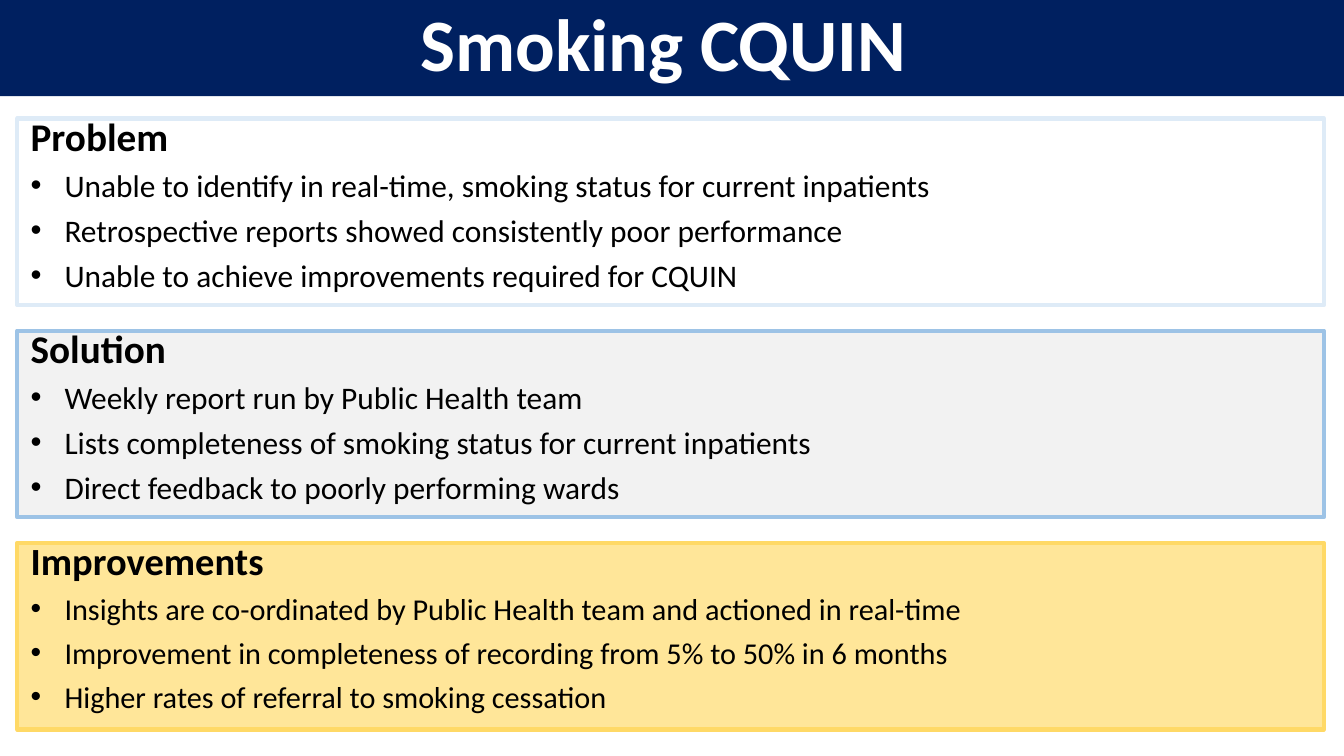
from lxml.etree import SubElement
from pptx import Presentation
from pptx.dml.color import RGBColor
from pptx.enum.text import MSO_ANCHOR as Anchor, MSO_AUTO_SIZE as AutoSize, PP_ALIGN as Align
from pptx.oxml.ns import qn
from pptx.util import Cm, Pt


def color(hex_string):
    return RGBColor.from_string(hex_string)


class SlideBuilder:
    font = "Calibri"
    ink = "000000"
    indent = Cm(0.64)

    def __init__(self, slide):
        self.slide = slide

    def place(self, shape, left, top, width, height):
        bounds = {"left": left, "top": top, "width": width, "height": height}
        for name, value in bounds.items():
            setattr(shape, name, Cm(value))

    def fill(self, shape, hex_string):
        shape.fill.solid()
        shape.fill.fore_color.rgb = color(hex_string)

    def add_text(self, paragraph, text, size, bold, ink):
        run = paragraph.add_run()
        run.text = text
        formats = {"name": self.font, "size": Pt(size), "bold": bold}
        for name, value in formats.items():
            setattr(run.font, name, value)
        run.font.color.rgb = color(ink)

    def bullet(self, paragraph):
        properties = paragraph._p.get_or_add_pPr()
        properties.set("marL", str(self.indent))
        properties.set("indent", str(-self.indent))
        SubElement(properties, qn("a:buFont"), typeface="Arial")
        SubElement(properties, qn("a:buChar"), char="•")

    def banner(self, text):
        title = self.slide.shapes.title
        self.place(title, 0, -0.03, 25.4, 1.85)
        self.fill(title, "002060")
        frame = title.text_frame
        formats = {"word_wrap": True, "auto_size": AutoSize.NONE,
                   "vertical_anchor": Anchor.MIDDLE}
        for name, value in formats.items():
            setattr(frame, name, value)
        heading = frame.paragraphs[0]
        heading.alignment = Align.CENTER
        heading.line_spacing = 0.9
        self.add_text(heading, text, 39.6, True, "FFFFFF")

    def panel(self, top, heading, points, fill, border, heading_size, point_size):
        """Add a bordered box with a bold heading above bulleted points."""
        box = self.slide.shapes.add_textbox(0, 0, 0, 0)
        self.place(box, 0.33, top, 24.69, 3.53)
        self.fill(box, fill)
        box.line.color.rgb = color(border)
        box.line.width = Pt(2.25)
        frame = box.text_frame
        frame.word_wrap = True
        for index, text in enumerate([heading, *points]):
            paragraph = frame.add_paragraph() if index else frame.paragraphs[0]
            paragraph.line_spacing = 0.7
            paragraph.space_before = Pt(10)
            if index:
                self.bullet(paragraph)
            size = point_size if index else heading_size
            self.add_text(paragraph, text, size, index == 0, self.ink)


PANELS = [
    ("Problem",
     ["Unable to identify in real-time, smoking status for current inpatients",
      "Retrospective reports showed consistently poor performance",
      "Unable to achieve improvements required for CQUIN"],
     "FFFFFF", "DEEBF7", 21, 16.8),
    ("Solution",
     ["Weekly report run by Public Health team",
      "Lists completeness of smoking status for current inpatients",
      "Direct feedback to poorly performing wards"],
     "F2F2F2", "9DC3E6", 21, 16.8),
    ("Improvements",
     ["Insights are co-ordinated by Public Health team and actioned in real-time",
      "Improvement in completeness of recording from 5% to 50% in 6 months",
      "Higher rates of referral to smoking cessation"],
     "FFE699", "FFD966", 20.6, 16.2),
]
FIRST_TOP, PITCH = 2.24, 4.01


def main():
    deck = Presentation()
    deck.slide_width, deck.slide_height = Cm(25.4), Cm(14.29)
    title_only = deck.slide_layouts[5]
    builder = SlideBuilder(deck.slides.add_slide(title_only))
    builder.banner("Smoking CQUIN ")
    for row, panel in enumerate(PANELS):
        builder.panel(FIRST_TOP + row * PITCH, *panel)
    deck.save("out.pptx")


if __name__ == "__main__":
    main()
